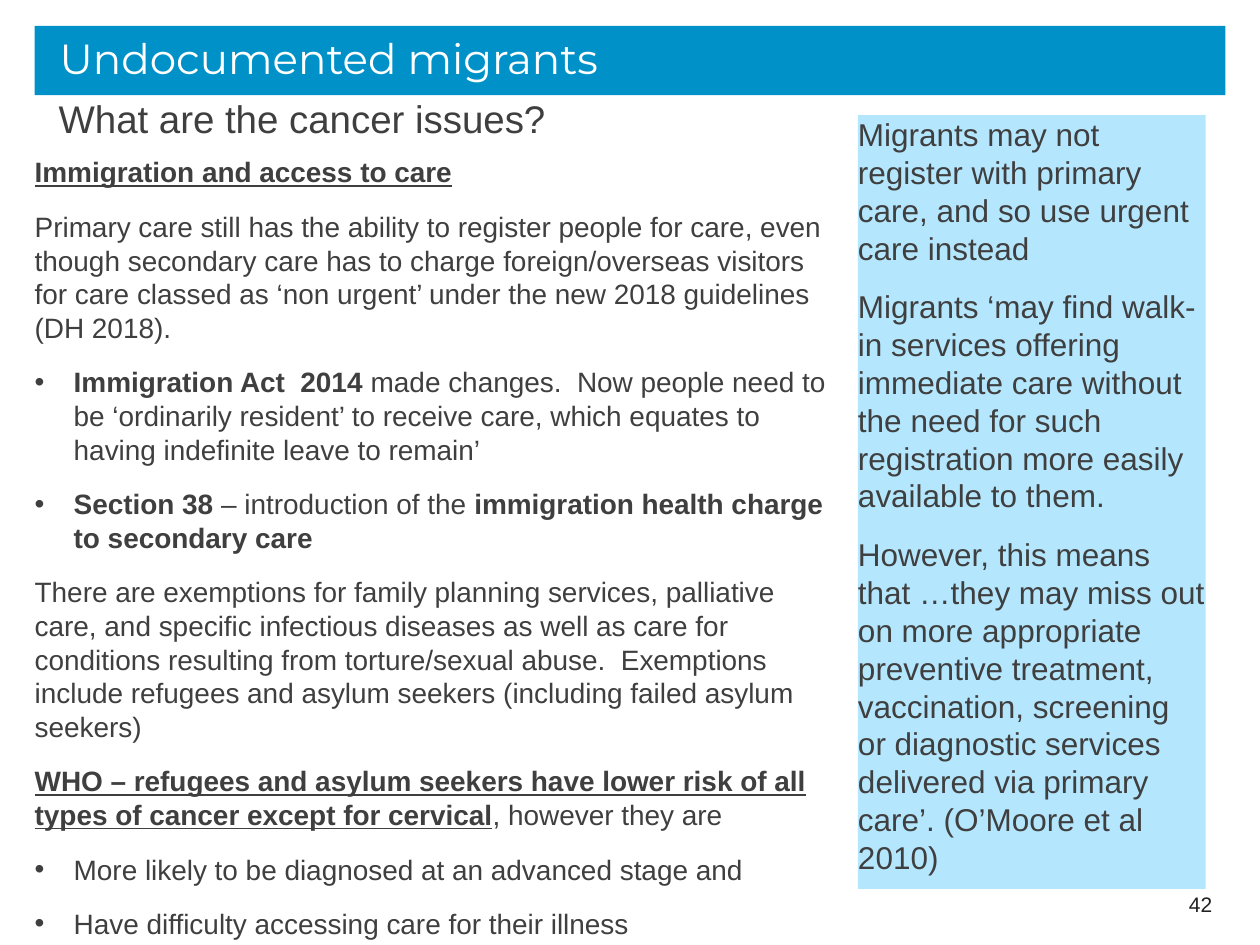
from lxml.etree import SubElement
from pptx import Presentation
from pptx.dml.color import RGBColor
from pptx.enum.shapes import MSO_SHAPE
from pptx.enum.text import MSO_ANCHOR as Anchor, PP_ALIGN as Align
from pptx.oxml.ns import qn
from pptx.util import Inches, Pt

BLUE = RGBColor(0x00, 0x91, 0xC9)
PALE_BLUE = RGBColor(0xB4, 0xE7, 0xFE)
WHITE = RGBColor(0xFF, 0xFF, 0xFF)
GREY = RGBColor(0x3F, 0x3F, 0x3F)
DARK = RGBColor(0x20, 0x20, 0x20)

WIDTH, HEIGHT = Inches(10), Inches(7.5)
INSET = 0.1
HANG = 0.31

# Runs are (text, style) with style "" plain, "b" bold, "bu" bold underlined.
# Each paragraph is (has bullet, runs).
ISSUES = [
    (False, [("Immigration and access to care", "bu")]),
    (False, [("Primary care still has the ability to register people for care, "
              "even though secondary care has to charge foreign/overseas visitors "
              "for care classed as ‘non urgent’ under the new 2018 guidelines "
              "(DH 2018).", "")]),
    (True, [("Immigration Act  2014 ", "b"),
            ("made changes.  Now people need to be ‘ordinarily resident’ to "
             "receive care, which equates to having indefinite leave to "
             "remain’", "")]),
    (True, [("Section 38 ", "b"), ("– introduction of the ", ""),
            ("immigration health charge to secondary care", "b")]),
    (False, [("There are exemptions for family planning services, palliative "
              "care, and specific infectious diseases as well as care for "
              "conditions resulting from torture/sexual abuse.  Exemptions "
              "include refugees and asylum seekers (including failed asylum "
              "seekers)", "")]),
    (False, [("WHO – refugees and asylum seekers have lower risk of all types "
              "of cancer except for cervical", "bu"),
             (", however they are", "")]),
    (True, [("More likely to be diagnosed at an advanced stage and", "")]),
    (True, [("Have difficulty accessing care for their illness", "")]),
]
ACCESS_QUOTES = [
    "Migrants may not register with primary care, and so use urgent care instead",
    "Migrants ‘may find walk-in services offering immediate care without the "
    "need for such registration more easily available to them.",
    "However, this means that …they may miss out on more appropriate preventive "
    "treatment, vaccination, screening or diagnostic services delivered via "
    "primary care’. (O’Moore et al  2010)",
]


def area(left, top, width, height):
    """Turn percentages of the slide into a box in EMU."""
    return (int(WIDTH * left / 100), int(HEIGHT * top / 100),
            int(WIDTH * width / 100), int(HEIGHT * height / 100))


def plain(*texts):
    return [(False, [(text, "")]) for text in texts]


def add_panel(slide, box, fill):
    panel = slide.shapes.add_shape(MSO_SHAPE.RECTANGLE, *box)
    panel.shadow.inherit = False
    panel.fill.solid()
    panel.fill.fore_color.rgb = fill
    panel.line.fill.background()
    return panel


def set_indent(paragraph, left, bullet):
    properties = paragraph._p.get_or_add_pPr()
    properties.set("marL", str(Inches(HANG if bullet else left)))
    properties.set("indent", str(-Inches(HANG) if bullet else 0))
    if bullet:
        SubElement(properties, qn("a:buFont"), typeface="Arial")
        SubElement(properties, qn("a:buChar"), char="•")


def write(shape, paragraphs, *, size, color=GREY, font="Arial", inset=0, indent=0,
          before=6, after=6, align=Align.LEFT, anchor=Anchor.TOP):
    frame = shape.text_frame
    frame.word_wrap = True
    frame.vertical_anchor = anchor
    frame.margin_left = frame.margin_right = Inches(inset)
    frame.margin_top = frame.margin_bottom = Inches(inset / 2)
    for index, (bullet, runs) in enumerate(paragraphs):
        paragraph = frame.add_paragraph() if index else frame.paragraphs[0]
        paragraph.alignment = align
        paragraph.space_before, paragraph.space_after = Pt(before), Pt(after)
        set_indent(paragraph, indent, bullet)
        for text, style in runs:
            run = paragraph.add_run()
            run.text = text
            run.font.name, run.font.size = font, Pt(size)
            run.font.color.rgb = color
            run.font.bold = "b" in style
            run.font.underline = "u" in style


def add_title_bar(slide, box):
    write(add_panel(slide, box, BLUE), plain("Undocumented migrants"), size=24,
          color=WHITE, font="Montserrat", inset=INSET, indent=0.1, after=0)


def add_subheading(slide, box):
    write(slide.shapes.add_textbox(*box), plain("What are the cancer issues?"),
          size=22, indent=0.19)


def add_page_number(slide, box):
    write(slide.shapes.add_textbox(*box), plain("42"), size=12, color=DARK,
          inset=INSET, before=0, after=0, align=Align.RIGHT,
          anchor=Anchor.MIDDLE)


def add_issues(slide, box):
    write(slide.shapes.add_textbox(*box), ISSUES, size=16)


def add_access_quotes(slide, box):
    write(add_panel(slide, box, PALE_BLUE), plain(*ACCESS_QUOTES), size=18)


def main():
    deck = Presentation()
    deck.slide_width, deck.slide_height = WIDTH, HEIGHT
    slide = deck.slides.add_slide(deck.slide_layouts[6])
    add_title_bar(slide, area(2.75, 2.75, 94.5, 7.33))
    add_subheading(slide, area(2.75, 10.1, 94.5, 6.27))
    add_page_number(slide, area(73.9, 93.03, 23.3, 5.33))
    add_issues(slide, area(2.75, 16.4, 63.8, 83.6))
    add_access_quotes(slide, area(68.1, 12.2, 27.6, 81.87))
    deck.save("out.pptx")


if __name__ == "__main__":
    main()
